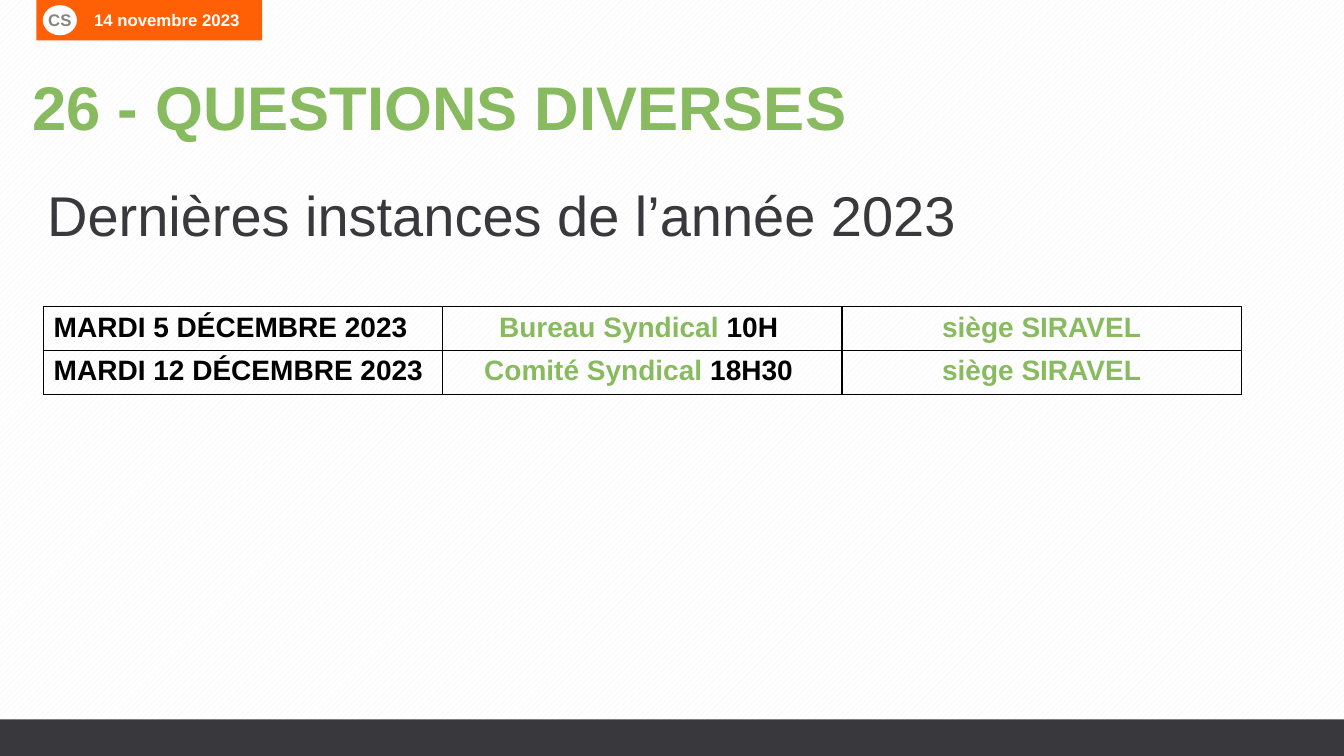
from lxml import etree
from pptx import Presentation
from pptx.dml.color import RGBColor
from pptx.enum.dml import MSO_PATTERN
from pptx.enum.shapes import MSO_SHAPE
from pptx.enum.text import MSO_ANCHOR, PP_ALIGN
from pptx.oxml.ns import qn
from pptx.util import Cm, Pt

RECTANGLE, OVAL = MSO_SHAPE.RECTANGLE, MSO_SHAPE.OVAL
WIDE_DIAGONAL = MSO_PATTERN.WIDE_UPWARD_DIAGONAL
LEFT, CENTER = PP_ALIGN.LEFT, PP_ALIGN.CENTER
TOP, MIDDLE = MSO_ANCHOR.TOP, MSO_ANCHOR.MIDDLE

FONT = "Arial"
GREEN, ORANGE, DARK, GREY = "88BB5F", "FF6005", "39383D", "858583"
BLACK, WHITE, STRIPE = "000000", "FFFFFF", "F2F2F2"
SLIDE_WIDTH, SLIDE_HEIGHT = Cm(33.87), Cm(19.05)

# Each cell is a list of (text, colour) runs
MEETINGS = [
    [[("MARDI 5 DÉCEMBRE 2023", BLACK)],
     [("Bureau Syndical ", GREEN), ("10H ", BLACK)],
     [("siège SIRAVEL", GREEN)]],
    [[("MARDI 12 DÉCEMBRE 2023", BLACK)],
     [("Comité Syndical ", GREEN), ("18H30 ", BLACK)],
     [("siège SIRAVEL", GREEN)]],
]


def rgb(colour):
    return RGBColor.from_string(colour)


def format_run(run, size, colour, bold=True):
    run.font.name = FONT
    run.font.size = Pt(size)
    run.font.bold = bold
    run.font.color.rgb = rgb(colour)


def write_line(frame, text, size, colour, bold=True, align=LEFT, anchor=TOP):
    frame.text = text
    frame.word_wrap = True
    frame.vertical_anchor = anchor
    paragraph = frame.paragraphs[0]
    paragraph.alignment = align
    format_run(paragraph.runs[0], size, colour, bold)


def add_block(slide, kind, left, top, width, height, colour):
    block = slide.shapes.add_shape(kind, left, top, width, height)
    block.shadow.inherit = False
    block.fill.solid()
    block.fill.fore_color.rgb = rgb(colour)
    block.line.fill.background()
    return block


def add_striped_background(slide):
    stripes = add_block(slide, RECTANGLE, 0, 0, SLIDE_WIDTH, SLIDE_HEIGHT, WHITE)
    stripes.fill.patterned()
    stripes.fill.pattern = WIDE_DIAGONAL
    stripes.fill.fore_color.rgb = rgb(STRIPE)
    stripes.fill.back_color.rgb = rgb(WHITE)
    slide.shapes._spTree.insert(2, stripes._element)  # behind the title


def add_date_tag(slide):
    tag = add_block(slide, RECTANGLE, Cm(0.92), 0, Cm(5.69), Cm(1.02), ORANGE)
    write_line(tag.text_frame, "14 novembre 2023", 12, WHITE, anchor=MIDDLE)
    tag.text_frame.margin_left = Cm(1.45)
    badge = add_block(slide, OVAL, Cm(1.08), Cm(0.13), Cm(0.86), Cm(0.76), WHITE)
    frame = badge.text_frame
    write_line(frame, "CS", 12, GREY, align=CENTER, anchor=MIDDLE)
    frame.word_wrap = False
    frame.margin_left = frame.margin_right = frame.margin_top = frame.margin_bottom = 0


def border_cell(cell, colour):
    properties = cell._tc.get_or_add_tcPr()
    for position, side in enumerate(("a:lnL", "a:lnR", "a:lnT", "a:lnB")):
        line = etree.Element(qn(side), w=str(Pt(1)))
        fill = etree.SubElement(line, qn("a:solidFill"))
        etree.SubElement(fill, qn("a:srgbClr"), val=colour)
        properties.insert(position, line)


def add_meeting_table(slide):
    row_height, column_width = Cm(1.1), Cm(10.06)
    rows, columns = len(MEETINGS), len(MEETINGS[0])
    table = slide.shapes.add_table(
        rows, columns, Cm(1.1), Cm(7.73),
        column_width * columns, row_height * rows).table
    table.first_row = table.horz_banding = False
    for row, meeting in enumerate(MEETINGS):
        for column, parts in enumerate(meeting):
            cell = table.cell(row, column)
            cell.fill.background()
            border_cell(cell, BLACK)
            paragraph = cell.text_frame.paragraphs[0]
            paragraph.alignment = CENTER if column else LEFT
            for text, colour in parts:
                run = paragraph.add_run()
                run.text = text
                format_run(run, 20, colour)


def main():
    presentation = Presentation()
    presentation.slide_width, presentation.slide_height = SLIDE_WIDTH, SLIDE_HEIGHT
    slide = presentation.slides.add_slide(presentation.slide_layouts[5])

    add_striped_background(slide)
    add_block(slide, RECTANGLE, 0, Cm(18.13), SLIDE_WIDTH, Cm(0.92), DARK)

    title = slide.shapes.title
    title.left, title.top, title.width, title.height = Cm(0.56), Cm(1.62), Cm(30.45), Cm(2.1)
    write_line(title.text_frame, "26 - QUESTIONS DIVERSES", 44, GREEN)

    subtitle = slide.shapes.add_textbox(Cm(0.94), Cm(4.42), Cm(30), Cm(1.9))
    write_line(subtitle.text_frame, "Dernières instances de l’année 2023", 40, DARK, bold=False)

    add_date_tag(slide)
    add_meeting_table(slide)
    presentation.save("out.pptx")


if __name__ == "__main__":
    main()
